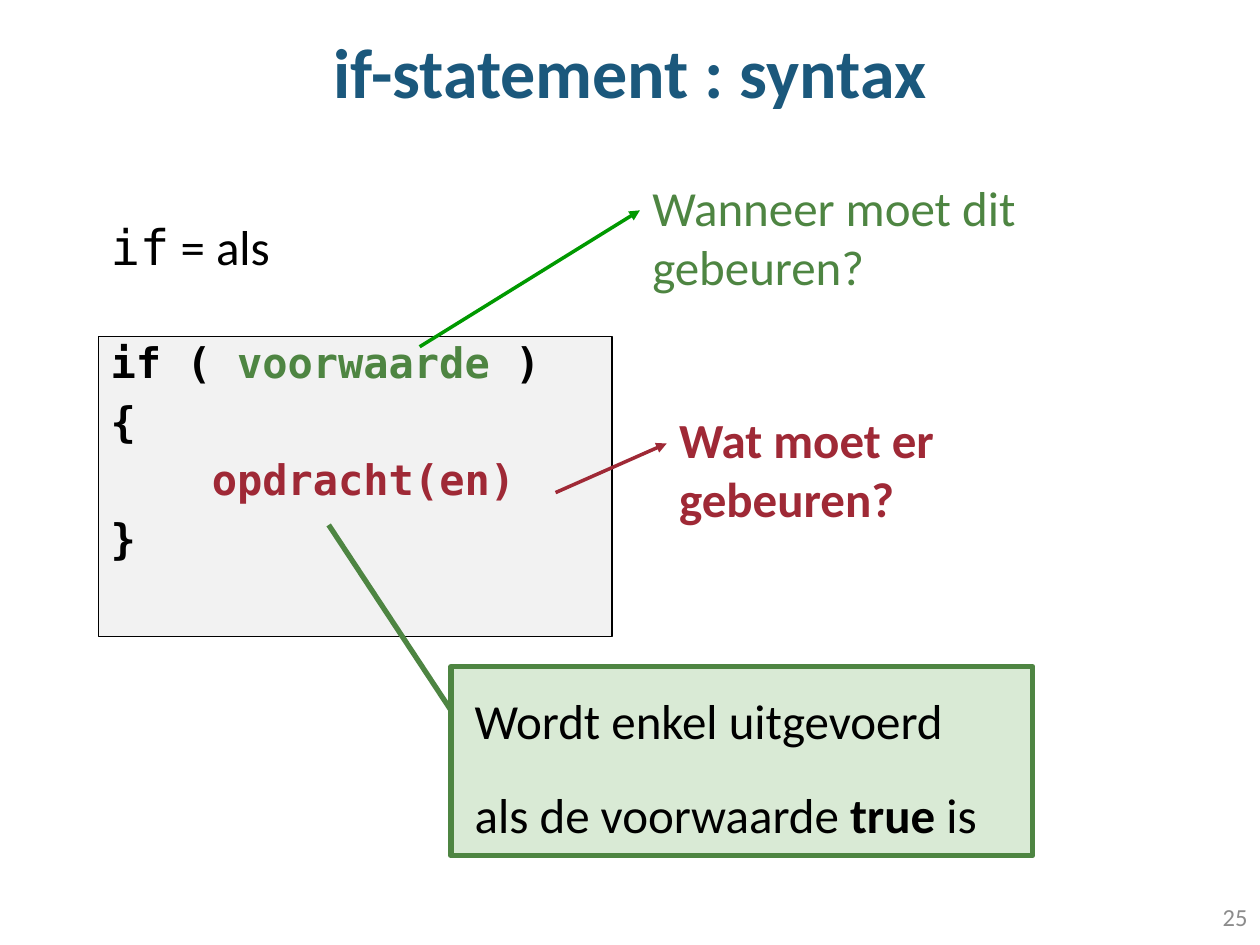
from lxml import etree
from pptx import Presentation
from pptx.dml.color import RGBColor
from pptx.enum import shapes, text
from pptx.oxml.ns import qn
from pptx.util import Cm, Pt

BLUE = RGBColor(0x1B, 0x58, 0x7C)
GREEN = RGBColor(0x4E, 0x85, 0x42)
BRIGHT_GREEN = RGBColor(0x00, 0x99, 0x00)
PALE_GREEN = RGBColor(0xD9, 0xEA, 0xD5)
RED = RGBColor(0x9F, 0x29, 0x36)
GREY = RGBColor(0x8C, 0x8C, 0x8C)
PALE_GREY = RGBColor(0xF2, 0xF2, 0xF2)
BLACK = RGBColor(0, 0, 0)
SANS, MONO = "Calibri", "DejaVu Sans Mono"

prs = Presentation()
prs.slide_width, prs.slide_height = Cm(25.4), Cm(19.05)
slide = prs.slides.add_slide(prs.slide_layouts[6])


def write(paragraph, words, size, color, font=SANS, bold=False, align=text.PP_ALIGN.LEFT):
    paragraph.add_run().text = words
    paragraph.alignment = align
    paragraph.font.name = font
    paragraph.font.size = Pt(size)
    paragraph.font.bold = bold
    paragraph.font.color.rgb = color
    return paragraph


def add_panel(preset, box, fill, line, width):
    panel = slide.shapes.add_shape(preset, *map(Cm, box))
    panel.shadow.inherit = False
    panel.fill.solid()
    panel.fill.fore_color.rgb = fill
    panel.line.color.rgb = line
    panel.line.width = Pt(width)
    panel.text_frame.word_wrap = True
    return panel


code = add_panel(shapes.MSO_SHAPE.RECTANGLE, (1.98, 6.78, 10.36, 6.05), PALE_GREY, BLACK, 0.75)
code.text_frame.vertical_anchor = text.MSO_ANCHOR.TOP
code_lines = [
    ([("if ( ", BLACK), ("voorwaarde ", GREEN), (")", BLACK)], 0),
    ([("{", BLACK)], 0),
    ([("opdracht(en)", RED)], 2.04),
    ([("}", BLACK)], 0),
]
for i, (parts, indent) in enumerate(code_lines):
    line = code.text_frame.paragraphs[0] if i == 0 else code.text_frame.add_paragraph()
    for words, color in parts:
        write(line, words, 24, BLACK, MONO, True)
        line.runs[-1].font.color.rgb = color
    line.line_spacing = 0.9
    line.space_before = Pt(7.5)
    line._p.get_or_add_pPr().set("marL", str(Cm(indent)))

MIDDLE, TOP = text.MSO_ANCHOR.MIDDLE, text.MSO_ANCHOR.TOP
LEFT, CENTER, RIGHT = text.PP_ALIGN.LEFT, text.PP_ALIGN.CENTER, text.PP_ALIGN.RIGHT
labels = [
    ("if-statement : syntax", (0, 0, 25.4, 3.05), 40, BLUE, True, CENTER, MIDDLE),
    ("25", (19.69, 17.96, 5.71, 1.02), 14, GREY, False, RIGHT, MIDDLE),
    ("Wat moet er gebeuren?", (13.44, 8.13, 7.42, 2.64), 28, RED, True, LEFT, TOP),
    ("Wanneer moet dit gebeuren?", (12.9, 3.45, 9.73, 2.64), 28, GREEN, False, LEFT, TOP),
    ("if", (1.98, 4.24, 5.51, 1.45), 28, BLACK, False, LEFT, TOP),
]
for words, box, size, color, bold, align, anchor in labels:
    frame = slide.shapes.add_textbox(*map(Cm, box)).text_frame
    frame.word_wrap = True
    frame.vertical_anchor = anchor
    label = write(frame.paragraphs[0], words, size, color, SANS, bold, align)
    if align == CENTER:
        label.line_spacing = 0.9
    if words == "if":
        label.runs[0].font.name = MONO
        label.add_run().text = " = als"

arrows = [
    ((8.46, 6.99, 12.9, 4.24), BRIGHT_GREEN),
    ((11.2, 9.93, 13.44, 8.94), RED),
]
for ends, color in arrows:
    arrow = slide.shapes.add_connector(shapes.MSO_CONNECTOR.STRAIGHT, *map(Cm, ends))
    arrow.line.color.rgb = color
    arrow.line.width = Pt(2)
    etree.SubElement(arrow.line._get_or_add_ln(), qn("a:tailEnd"), type="triangle")
    etree.SubElement(arrow._element.spPr, qn("a:effectLst"))

callout = add_panel(shapes.MSO_SHAPE.LINE_CALLOUT_1, (9.09, 13.44, 11.73, 3.81), PALE_GREEN, GREEN, 3)
for i, value in enumerate((0.23, 0, -0.75, -0.21)):
    callout.adjustments[i] = value
callout.text_frame.vertical_anchor = MIDDLE
callout.text_frame.margin_left = Cm(0.48)
executed = write(callout.text_frame.paragraphs[0], "Wordt enkel uitgevoerd", 28, BLACK)
condition = write(callout.text_frame.add_paragraph(), "als de voorwaarde ", 28, BLACK)
true_word = condition.add_run()
true_word.text = "true"
true_word.font.bold = True
condition.add_run().text = " is"
for sentence in (executed, condition):
    sentence.line_spacing = Pt(40)
    sentence.space_before = Pt(14)

prs.save("out.pptx")
